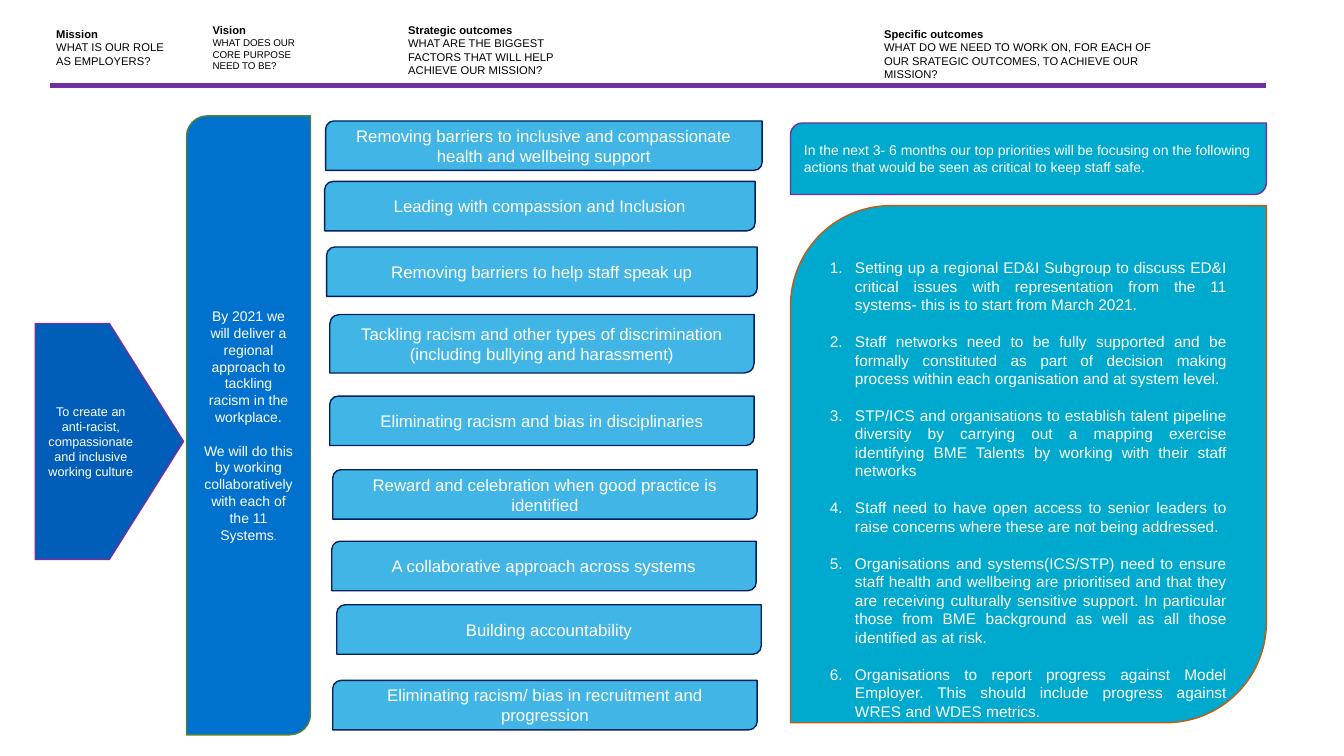
"""Build the anti-racism mission, vision and outcomes slide."""
import pptx
import pptx.dml.color
import pptx.enum.shapes
import pptx.enum.text
import pptx.oxml
import pptx.oxml.ns
import pptx.util
import lxml.etree

Inches = pptx.util.Inches
Pt = pptx.util.Pt
SHAPES = pptx.enum.shapes.MSO_SHAPE
ALIGN = pptx.enum.text.PP_ALIGN
ANCHOR = pptx.enum.text.MSO_ANCHOR


def color(hex_string):
    return pptx.dml.color.RGBColor.from_string(hex_string)


def write_text(paragraph, text, size=12, text_color="FFFFFF", bold=False, align=ALIGN.LEFT, space_before=0):
    paragraph.alignment = align
    paragraph.space_before = Pt(space_before)
    run = paragraph.add_run()
    run.text = text
    run.font.name = "Arial"
    run.font.size = Pt(size)
    run.font.bold = bold
    run.font.color.rgb = color(text_color)


presentation = pptx.Presentation()
presentation.slide_width = Inches(13.33)
presentation.slide_height = Inches(7.5)
slide = presentation.slides.add_slide(presentation.slide_layouts[6])

divider = slide.shapes.add_connector(
    pptx.enum.shapes.MSO_CONNECTOR.STRAIGHT, Inches(0.5), Inches(0.85), Inches(12.56), Inches(0.85))
divider.line.color.rgb = color("7030A0")
divider.line.width = Pt(3.25)
lxml.etree.SubElement(divider._element.spPr, pptx.oxml.ns.qn("a:effectLst"))

headings = [
    (0.46, 0.22, 1.44, 0.5, 8, "Mission", "WHAT IS OUR ROLE\vAS EMPLOYERS?"),
    (2.01, 0.18, 1.07, 0.59, 7, "Vision", "WHAT DOES OUR CORE PURPOSE NEED TO BE?"),
    (3.95, 0.18, 1.76, 0.64, 8, "Strategic outcomes",
     "WHAT ARE THE BIGGEST FACTORS THAT WILL HELP ACHIEVE OUR MISSION?"),
    (8.67, 0.22, 3.05, 0.64, 8, "Specific outcomes",
     "WHAT DO WE NEED TO WORK ON, FOR EACH OF OUR SRATEGIC OUTCOMES, TO ACHIEVE OUR MISSION?"),
]
for left, top, width, height, size, title, question in headings:
    box = slide.shapes.add_textbox(Inches(left), Inches(top), Inches(width), Inches(height))
    box.text_frame.word_wrap = True
    write_text(box.text_frame.paragraphs[0], title, size=8, text_color="000000", bold=True)
    lines = question.split("\v")
    paragraph = box.text_frame.add_paragraph()
    for index, line in enumerate(lines):
        if index:
            paragraph.add_line_break()
        write_text(paragraph, line, size=size, text_color="000000")

mission = ["To create an anti-racist, compassionate and inclusive working culture"]
vision = [
    "By 2021 we will deliver a regional approach to tackling racism in the workplace.",
    "We will do this by working collaboratively with each of the 11 Systems",
]
focus = ["In the next 3- 6 months our top priorities will be focusing on the following actions "
         "that would be seen as critical to keep staff safe."]
priorities = [
    "Setting up a regional ED&I Subgroup to discuss ED&I critical issues with representation "
    "from the 11 systems- this is to start from March 2021.",
    "Staff networks need to be fully supported and be formally constituted as part of decision "
    "making process within each organisation and at system level.",
    "STP/ICS and organisations to establish talent pipeline diversity by carrying out a mapping "
    "exercise identifying BME Talents by working with their staff networks",
    "Staff need to have open access to senior leaders to raise concerns where these are not being addressed.",
    "Organisations and systems(ICS/STP) need to ensure staff health and wellbeing are prioritised "
    "and that they are receiving culturally sensitive support. In particular those from BME "
    "background as well as all those identified as at risk.",
    "Organisations to report progress against Model Employer. This should include progress "
    "against WRES and WDES metrics.",
]
strategic_outcomes = [
    (3.23, 1.2, 4.33, 0.49, "Removing barriers to inclusive and compassionate health and wellbeing support"),
    (3.22, 1.8, 4.27, 0.49, "Leading with compassion and Inclusion"),
    (3.24, 2.45, 4.27, 0.49, "Removing barriers to help staff speak up"),
    (3.27, 3.12, 4.21, 0.58,
     "Tackling racism and other types of discrimination (including bullying and harassment)"),
    (3.27, 3.93, 4.21, 0.49, "Eliminating racism and bias in disciplinaries"),
    (3.3, 4.66, 4.21, 0.49, "Reward and celebration when good practice is identified"),
    (3.29, 5.37, 4.21, 0.49, "A collaborative approach across systems"),
    (3.34, 6, 4.21, 0.49, "Building accountability"),
    (3.3, 6.75, 4.21, 0.49, "Eliminating racism/ bias in recruitment and progression"),
]

rounded = SHAPES.ROUND_2_DIAG_RECTANGLE
panels = [
    (SHAPES.PENTAGON, 0.35, 3.21, 1.47, 2.34, "005EB8", "7030A0", 9, ALIGN.CENTER, mission),
    (rounded, 1.85, 1.15, 1.23, 6.14, "0072CE", "548235", 10, ALIGN.CENTER, vision),
    (rounded, 7.84, 1.22, 4.72, 0.71, "00A9CE", "7030A0", 10, ALIGN.LEFT, focus),
    (rounded, 7.84, 2.04, 4.72, 5.13, "00A9CE", "C55A11", 11, ALIGN.JUSTIFY, priorities),
]
for left, top, width, height, outcome in strategic_outcomes:
    panels.append((rounded, left, top, width, height, "41B6E6", "002060", 12, ALIGN.CENTER, [outcome]))

for preset, left, top, width, height, fill, outline, size, align, texts in panels:
    shape = slide.shapes.add_shape(preset, Inches(left), Inches(top), Inches(width), Inches(height))
    shape.shadow.inherit = False
    shape.fill.solid()
    shape.fill.fore_color.rgb = color(fill)
    shape.line.color.rgb = color(outline)
    shape.line.width = Pt(1)
    frame = shape.text_frame
    frame.word_wrap = True
    frame.vertical_anchor = ANCHOR.MIDDLE
    for index, text in enumerate(texts):
        paragraph = frame.add_paragraph() if index else frame.paragraphs[0]
        write_text(paragraph, text, size=size, align=align, space_before=1.2 * size if index else 0)
        if texts is priorities:
            properties = paragraph._p.get_or_add_pPr()
            properties.set("marL", str(Inches(0.25)))
            properties.set("indent", str(-Inches(0.25)))
            numbering = lxml.etree.SubElement(properties, pptx.oxml.ns.qn("a:buAutoNum"))
            numbering.set("type", "arabicPeriod")
    if texts is vision:
        write_text(paragraph, ".", size=7, align=align, space_before=1.2 * size)
    if texts is priorities:
        shape.adjustments[0] = 0.211
        frame.vertical_anchor = ANCHOR.TOP
        frame.margin_top = Inches(0.23)

presentation.save("out.pptx")
